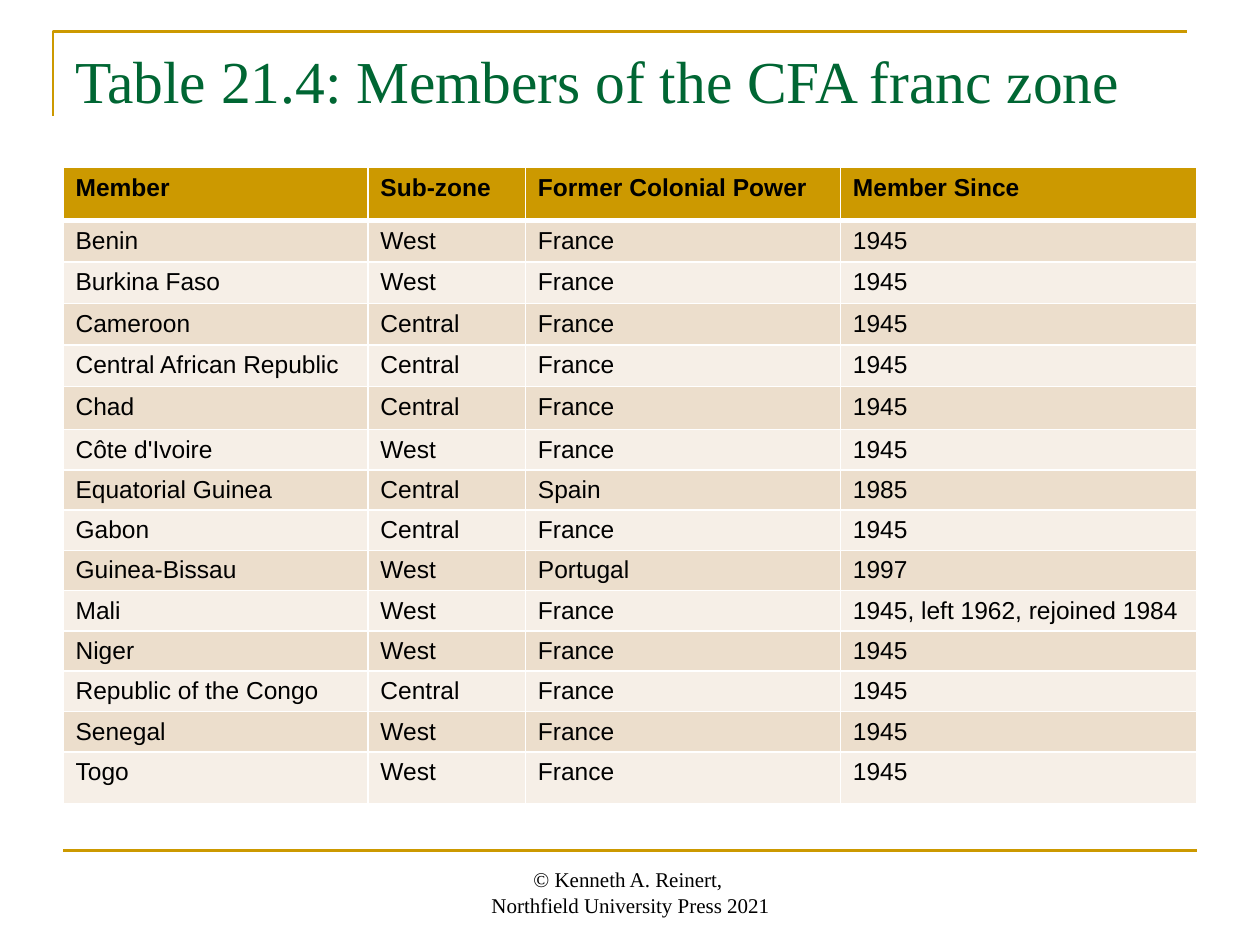
from dataclasses import astuple, dataclass

import pptx
import pptx.dml.color
import pptx.enum.shapes
import pptx.enum.text
import pptx.oxml
import pptx.oxml.ns
import pptx.presentation
import pptx.util

Inches = pptx.util.Inches
Pt = pptx.util.Pt
GOLD, GREEN, BLACK, WHITE = "CC9900", "006633", "000000", "FFFFFF"
BANDS = ("ECDECC", "F6EFE7")
WIDTHS = (2.42, 1.25, 2.5, 2.83)
HEIGHTS = [0.42] + [0.33] * 4 + [0.34] + [0.32] * 8 + [0.41]


@dataclass
class Member:
    name: str
    zone: str
    power: str = "France"
    since: str = "1945"


@dataclass
class Font:
    face: str
    size: float
    ink: str = BLACK
    bold: bool = False


@dataclass
class Label:
    box: tuple[float, float, float, float]
    lines: tuple[str, ...]
    font: Font
    align: pptx.enum.text.PP_ALIGN = pptx.enum.text.PP_ALIGN.LEFT
    anchor: pptx.enum.text.MSO_ANCHOR = pptx.enum.text.MSO_ANCHOR.TOP


HEAD = Member("Member", "Sub-zone", "Former Colonial Power", "Member Since")
MEMBERS = [
    Member("Benin", "West"),
    Member("Burkina Faso", "West"),
    Member("Cameroon", "Central"),
    Member("Central African Republic", "Central"),
    Member("Chad", "Central"),
    Member("Côte d'Ivoire", "West"),
    Member("Equatorial Guinea", "Central", "Spain", "1985"),
    Member("Gabon", "Central"),
    Member("Guinea-Bissau", "West", "Portugal", "1997"),
    Member("Mali", "West", since="1945, left 1962, rejoined 1984"),
    Member("Niger", "West"),
    Member("Republic of the Congo", "Central"),
    Member("Senegal", "West"),
    Member("Togo", "West"),
]
LABELS = [
    Label((0.5, 0.3, 9, 1.25), ("Table 21.4: Members of the CFA franc zone",),
          Font("Times New Roman", 34, GREEN)),
    Label((3.42, 6.83, 3.17, 0.5),
          ("© Kenneth A. Reinert, ", "Northfield University Press 2021"),
          Font("Times New Roman", 12),
          pptx.enum.text.PP_ALIGN.CENTER, pptx.enum.text.MSO_ANCHOR.BOTTOM),
]


def color(code: str) -> pptx.dml.color.RGBColor:
    return pptx.dml.color.RGBColor.from_string(code)


def write(para, text: str, font: Font) -> None:
    run = para.add_run()
    run.text = text
    run.font.name = font.face
    run.font.size = Pt(font.size)
    run.font.bold = font.bold
    run.font.color.rgb = color(font.ink)


def stroke(shape) -> None:
    shape.line.color.rgb = color(GOLD)
    shape.line.width = Pt(1.5)


def rules(slide) -> None:
    path = slide.shapes.build_freeform(Inches(0.42), Inches(0.92))
    path.add_line_segments(
        [(Inches(0.42), Inches(0.25)), (Inches(9.42), Inches(0.25))], close=False)
    frame = path.convert_to_shape()
    frame.shadow.inherit = False
    frame.fill.background()
    stroke(frame)
    foot = slide.shapes.add_connector(
        pptx.enum.shapes.MSO_CONNECTOR.STRAIGHT,
        Inches(0.5), Inches(6.75), Inches(9.5), Inches(6.75))
    pptx.oxml.ns.qn("a:effectLst")
    stroke(foot)
    foot._element.spPr.append(pptx.oxml.parse_xml(
        f"<a:effectLst {pptx.oxml.ns.nsdecls('a')}/>"))


def label(slide, item: Label) -> None:
    frame = slide.shapes.add_textbox(*map(Inches, item.box)).text_frame
    frame.word_wrap = True
    frame.vertical_anchor = item.anchor
    for i, line in enumerate(item.lines):
        para = frame.add_paragraph() if i else frame.paragraphs[0]
        para.alignment = item.align
        write(para, line, item.font)


def border(cell, top: float, bottom: float) -> None:
    props = cell._tc.get_or_add_tcPr()
    for i, (side, width) in enumerate(
            (("L", 1), ("R", 1), ("T", top), ("B", bottom))):
        props.insert(i, pptx.oxml.parse_xml(
            f'<a:ln{side} {pptx.oxml.ns.nsdecls("a")} w="{Pt(width)}">'
            f'<a:solidFill><a:srgbClr val="{WHITE}"/></a:solidFill></a:ln{side}>'))


def grid(slide) -> None:
    rows = [HEAD] + MEMBERS
    table = slide.shapes.add_table(
        len(rows), len(WIDTHS), Inches(0.5), Inches(1.33),
        Inches(sum(WIDTHS)), Inches(sum(HEIGHTS))).table
    for col, width in zip(table.columns, WIDTHS):
        col.width = Inches(width)
    for r, (member, height) in enumerate(zip(rows, HEIGHTS)):
        table.rows[r].height = Inches(height)
        for c, text in enumerate(astuple(member)):
            cell = table.cell(r, c)
            cell.fill.solid()
            cell.fill.fore_color.rgb = color(BANDS[(r - 1) % 2] if r else GOLD)
            border(cell, 3 if r == 1 else 1, 1 if r else 3)
            write(cell.text_frame.paragraphs[0], text,
                  Font("Arial", 14, bold=r == 0))


def main() -> None:
    """Build the slide listing the members of the CFA franc zone."""
    deck = pptx.Presentation()
    deck.slide_width, deck.slide_height = Inches(10), Inches(7.5)
    slide = deck.slides.add_slide(deck.slide_layouts[6])
    rules(slide)
    grid(slide)
    for item in LABELS:
        label(slide, item)
    deck.save("out.pptx")


if __name__ == "__main__":
    main()
